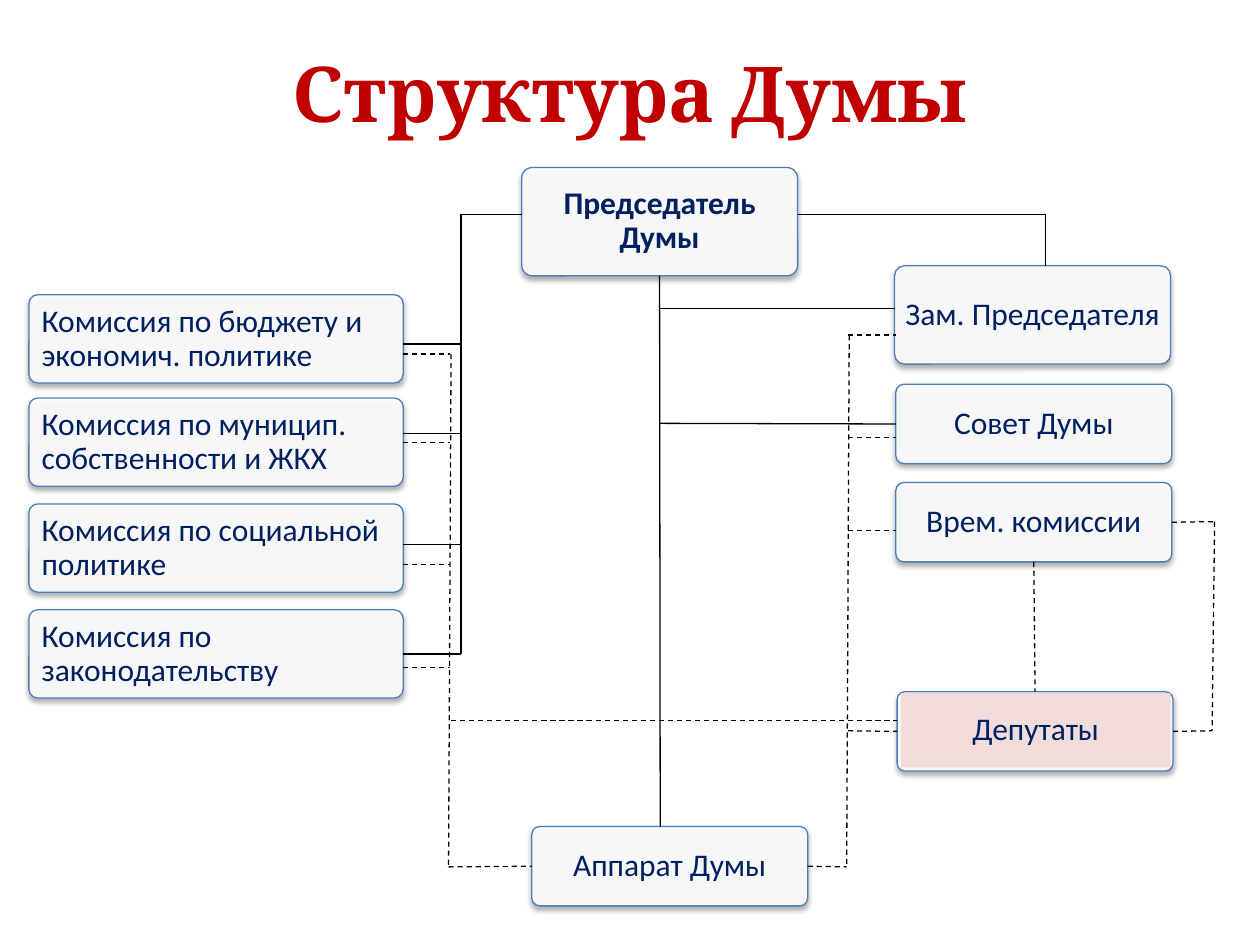
import pptx
import pptx.util
import pptx.dml.color
import pptx.enum.dml
import pptx.enum.shapes
import pptx.enum.text
import pptx.oxml
import pptx.oxml.ns

Inches = pptx.util.Inches
Pt = pptx.util.Pt
SHAPE = pptx.enum.shapes.MSO_SHAPE
ALIGN = pptx.enum.text.PP_ALIGN
NS = pptx.oxml.ns.nsdecls("a")
TOP, LEFT, BOTTOM, RIGHT = range(4)


def color(value):
    return pptx.dml.color.RGBColor.from_string(value)


def write(tf, text, size=18, font="Calibri", fill="002060", bold=False,
          align=ALIGN.CENTER, spacing=0.9, inset=0.06):
    tf.word_wrap = True
    tf.vertical_anchor = pptx.enum.text.MSO_ANCHOR.MIDDLE
    tf.margin_left = tf.margin_right = Inches(inset)
    tf.margin_top = tf.margin_bottom = Inches(0.03)
    p = tf.paragraphs[0]
    p.alignment = align
    p.line_spacing = spacing
    r = p.add_run()
    r.text = text
    r.font.size = Pt(size)
    r.font.name = font
    r.font.bold = bold
    r.font.color.rgb = color(fill)


class Chart:
    border = "4B7EBC"
    ink = "000000"
    width = 0.75

    def __init__(self, prs):
        self.s = prs.slides.add_slide(prs.slide_layouts[5])

    def title(self, text):
        sp = self.s.shapes.title
        sp.left, sp.top = Inches(0.5), Inches(0.3)
        sp.width, sp.height = Inches(9), Inches(0.85)
        write(sp.text_frame, text, size=44, font="Cambria", fill="C00000",
              bold=True, spacing=1)

    def box(self, x, y, w, h, text=None, **style):
        sp = self.s.shapes.add_shape(SHAPE.ROUNDED_RECTANGLE, Inches(x),
                                     Inches(y), Inches(w), Inches(h))
        sp.adjustments[0] = 0.1
        sp.fill.solid()
        sp.fill.fore_color.rgb = color("FFFFFF")
        rgb = sp.fill._xPr.find(".//" + pptx.oxml.ns.qn("a:srgbClr"))
        rgb.append(pptx.oxml.parse_xml(f'<a:alpha {NS} val="90000"/>'))
        sp.line.color.rgb = color(self.border)
        sp.line.width = Pt(self.width)
        sp.shadow.inherit = False
        effects = sp._element.spPr.find(pptx.oxml.ns.qn("a:effectLst"))
        effects.append(pptx.oxml.parse_xml(
            f'<a:outerShdw {NS} blurRad="{Pt(3.1)}" dist="{Pt(1.8)}" '
            'dir="5400000" rotWithShape="0"><a:srgbClr val="000000">'
            '<a:alpha val="35000"/></a:srgbClr></a:outerShdw>'))
        if text:
            write(sp.text_frame, text, **style)
        return sp

    def panel(self, x, y, w, h, text, fill):
        sp = self.s.shapes.add_shape(SHAPE.RECTANGLE, Inches(x), Inches(y),
                                     Inches(w), Inches(h))
        sp.fill.solid()
        sp.fill.fore_color.rgb = color(fill)
        sp.line.fill.background()
        sp.shadow.inherit = False
        write(sp.text_frame, text)

    def line(self, x1, y1, x2, y2, dash=False, begin=None, end=None):
        c = self.s.shapes.add_connector(
            pptx.enum.shapes.MSO_CONNECTOR.STRAIGHT,
            Inches(x1), Inches(y1), Inches(x2), Inches(y2))
        c.line.color.rgb = color(self.ink)
        c.line.width = Pt(self.width)
        if dash:
            c.line.dash_style = pptx.enum.dml.MSO_LINE.DASH
        c._element.spPr.append(pptx.oxml.parse_xml(f"<a:effectLst {NS}/>"))
        if begin:
            c.begin_connect(*begin)
        if end:
            c.end_connect(*end)


def main():
    prs = pptx.Presentation()
    prs.slide_width, prs.slide_height = Inches(10), Inches(7.5)
    chart = Chart(prs)
    chart.title("Структура Думы")

    commissions = [
        chart.box(0.23, y, 2.97, 0.7, text, align=ALIGN.LEFT, inset=0.08)
        for y, text in (
            (2.34, "Комиссия по бюджету и экономич. политике"),
            (3.16, "Комиссия по муницип. собственности и ЖКХ"),
            (4.0, "Комиссия по социальной политике"),
            (4.84, "Комиссия по законодательству"))]
    chair = chart.box(4.14, 1.33, 2.19, 0.86, "Председатель Думы", bold=True)
    office = chart.box(4.22, 6.56, 2.19, 0.63, "Аппарат Думы")
    chart.box(7.1, 2.11, 2.19, 0.78, "Зам. Председателя")
    council = chart.box(7.11, 3.05, 2.19, 0.63, "Совет Думы")
    temporary = chart.box(7.11, 3.83, 2.19, 0.63, "Врем. комиссии")
    deputies = chart.box(7.12, 5.49, 2.19, 0.63)
    chart.panel(7.15, 5.5, 2.14, 0.59, "Депутаты", "F2DCDB")

    chart.line(5.24, 2.19, 5.24, 6.56, begin=(chair, BOTTOM))
    chart.line(5.24, 2.45, 7.1, 2.45)
    chart.line(5.24, 3.36, 7.11, 3.36, end=(council, LEFT))
    chart.line(6.33, 1.7, 8.3, 1.7)
    chart.line(8.3, 1.7, 8.3, 2.11)

    chart.line(4.14, 1.7, 3.66, 1.7)
    chart.line(3.66, 1.7, 3.66, 5.19)
    for y in (2.73, 3.44, 4.32):
        chart.line(3.2, y, 3.66, y)
    chart.line(3.2, 5.19, 3.66, 5.19, begin=(commissions[3], RIGHT))

    for y in (2.81, 4.48, 5.3):
        chart.line(3.2, y, 3.57, y, dash=True)
    chart.line(3.2, 3.51, 3.57, 3.51, dash=True,
               begin=(commissions[1], RIGHT))
    chart.line(3.58, 2.81, 3.56, 6.88, dash=True)
    chart.line(3.56, 6.88, 4.22, 6.88, dash=True, end=(office, LEFT))
    chart.line(3.58, 5.72, 7.12, 5.72, dash=True)

    for y in (2.66, 3.47, 4.21):
        chart.line(6.73, y, 7.11, y, dash=True)
    chart.line(6.73, 5.8, 7.12, 5.8, dash=True, end=(deputies, LEFT))
    chart.line(6.74, 2.66, 6.72, 6.88, dash=True)
    chart.line(6.41, 6.88, 6.72, 6.88, dash=True, begin=(office, RIGHT))

    chart.line(8.21, 4.46, 8.21, 5.49, dash=True,
               begin=(temporary, BOTTOM), end=(deputies, TOP))
    chart.line(9.3, 4.14, 9.64, 4.14, dash=True, begin=(temporary, RIGHT))
    chart.line(9.64, 4.14, 9.62, 5.8, dash=True)
    chart.line(9.31, 5.8, 9.62, 5.8, dash=True, begin=(deputies, RIGHT))

    prs.save("out.pptx")


if __name__ == "__main__":
    main()
